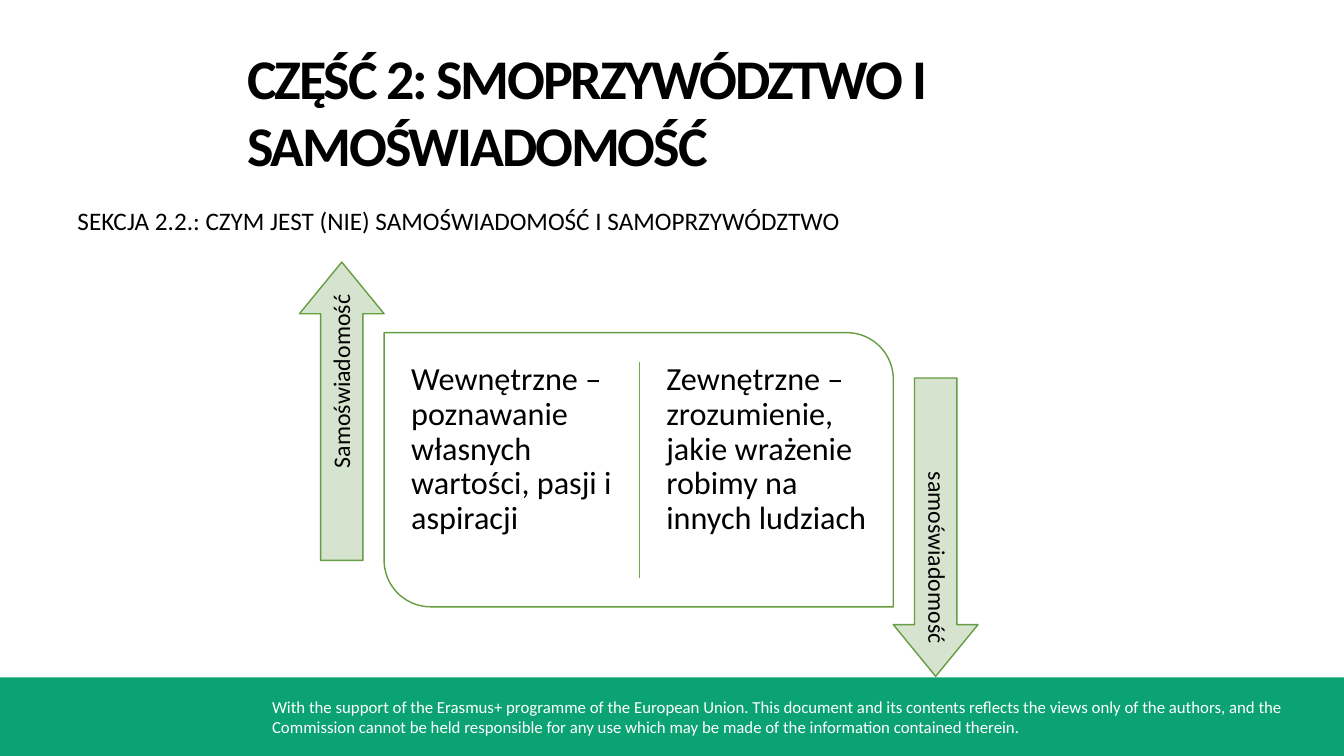
from pptx import Presentation
from pptx.dml.color import RGBColor
from pptx.enum.shapes import MSO_CONNECTOR, MSO_SHAPE
from pptx.enum.text import MSO_ANCHOR, MSO_AUTO_SIZE, PP_ALIGN
from pptx.oxml.ns import qn
from pptx.util import Inches, Pt
from lxml import etree

LEFT, RIGHT = PP_ALIGN.LEFT, PP_ALIGN.RIGHT
TOP, MIDDLE = MSO_ANCHOR.TOP, MSO_ANCHOR.MIDDLE
FIXED = MSO_AUTO_SIZE.NONE
RECT, ARROW = MSO_SHAPE.RECTANGLE, MSO_SHAPE.RIGHT_ARROW
PANEL = MSO_SHAPE.ROUND_2_DIAG_RECTANGLE
STRAIGHT = MSO_CONNECTOR.STRAIGHT


def color(code):
    """Turn a hex string into a colour."""
    return RGBColor.from_string(code)


class Deck:
    """Hold the style and the current slide."""

    font = "Calibri"
    ink, white = "000000", "FFFFFF"
    green, edge, rule, pale = "0CA373", "669D40", "70AD47", "D5E3CF"

    def __init__(self):
        """Open a wide deck with one title-only slide."""
        self.deck = Presentation()
        self.deck.slide_width = Inches(13.33)
        self.deck.slide_height = Inches(7.5)
        self.slide = self.deck.slides.add_slide(self.deck.slide_layouts[5])
        self.shapes = self.slide.shapes

    def place(self, item, box):
        """Move an item to a box in inches."""
        item.left, item.top, item.width, item.height = map(Inches, box)

    def label(self, item, text, size, tint=ink, bold=False, align=LEFT,
              anchor=TOP, inset=(0.1, 0.05, 0.1, 0.05)):
        """Set one paragraph and return it with its run."""
        frame = item.text_frame
        frame.word_wrap = True
        frame.auto_size = FIXED
        frame.vertical_anchor = anchor
        (frame.margin_left, frame.margin_top,
         frame.margin_right, frame.margin_bottom) = map(Inches, inset)
        para = frame.paragraphs[0]
        para.alignment = align
        run = para.add_run()
        run.text = text
        run.font.name = self.font
        run.font.size = Pt(size)
        run.font.bold = bold
        run.font.color.rgb = color(tint)
        return para, run

    def title(self, box, text):
        """Fill the title with tight bold letters."""
        item = self.shapes.title
        self.place(item, box)
        run = self.label(item, text, 40, bold=True, inset=(0, 0.01, 0, 0))[1]
        run.font._element.set("spc", "-150")

    def text(self, box, text, size, turn=0, lead=None, **style):
        """Add a text box, turned if asked."""
        item = self.shapes.add_textbox(*map(Inches, box))
        item.rotation = turn
        para = self.label(item, text, size, **style)[0]
        if lead:
            para.line_spacing = lead

    def shape(self, kind, box, fill, line=None, adjust=(), turn=0):
        """Add a flat preset shape."""
        item = self.shapes.add_shape(kind, *map(Inches, box))
        item.shadow.inherit = False
        item.rotation = turn
        for spot, value in enumerate(adjust):
            item.adjustments[spot] = value
        item.fill.solid()
        item.fill.fore_color.rgb = color(fill)
        if line:
            item.line.color.rgb = color(line)
            item.line.width = Pt(1)
        else:
            item.line.fill.background()

    def line(self, start, end):
        """Add a thin straight rule."""
        item = self.shapes.add_connector(STRAIGHT, *map(Inches, start + end))
        item.line.color.rgb = color(self.rule)
        item.line.width = Pt(1)
        etree.SubElement(item._element.spPr, qn("a:effectLst"))


def main():
    """Build and save the slide."""
    deck = Deck()
    deck.shape(RECT, (0, 6.72, 13.33, 0.78), deck.green)
    deck.text((2.6, 6.86, 10.42, 0.5),
              "With the support of the Erasmus+ programme of the European "
              "Union. This document and its contents reflects the views only "
              "of the authors, and the Commission cannot be held responsible "
              "for any use which may be made of the information contained "
              "therein.", 12, tint=deck.white)
    deck.title((2.45, 0.42, 9.35, 1.36),
               "CZĘŚĆ 2: SMOPRZYWÓDZTWO I SAMOŚWIADOMOŚĆ")
    deck.text((0.67, 1.99, 10.55, 0.4),
              "SEKCJA 2.2.: CZYM JEST (NIE) SAMOŚWIADOMOŚĆ I "
              "SAMOPRZYWÓDZTWO", 18)

    deck.shape(PANEL, (3.81, 3.3, 5.05, 2.72), deck.white, deck.edge,
               (0, 0.17))
    deck.line((6.34, 3.59), (6.34, 5.73))
    sides = (
        (3.98, "Wewnętrzne – poznawanie własnych wartości, pasji i aspiracji"),
        (6.51, "Zewnętrzne – zrozumienie, jakie wrażenie robimy na innych "
               "ludziach"),
    )
    for left, text in sides:
        deck.text((left, 3.5, 2.19, 2.3), text, 23, lead=0.9,
                  inset=(0.1,) * 4)

    arrows = (
        (1.91, 3.66, 4, 270, "Samoświadomość"),
        (7.8, 4.81, 4.89, 90, "samoświadomość"),
    )
    for left, top, level, turn, text in arrows:
        deck.shape(ARROW, (left, top, 2.96, 0.84), deck.pale, deck.edge,
                   (0.5, 0.61), turn)
        deck.text((left + 0.13, level, 2.71, 0.42), text, 17, turn, 0.9,
                  align=RIGHT, anchor=MIDDLE, inset=(0.07,) * 4)
    deck.deck.save("out.pptx")


if __name__ == "__main__":
    main()
